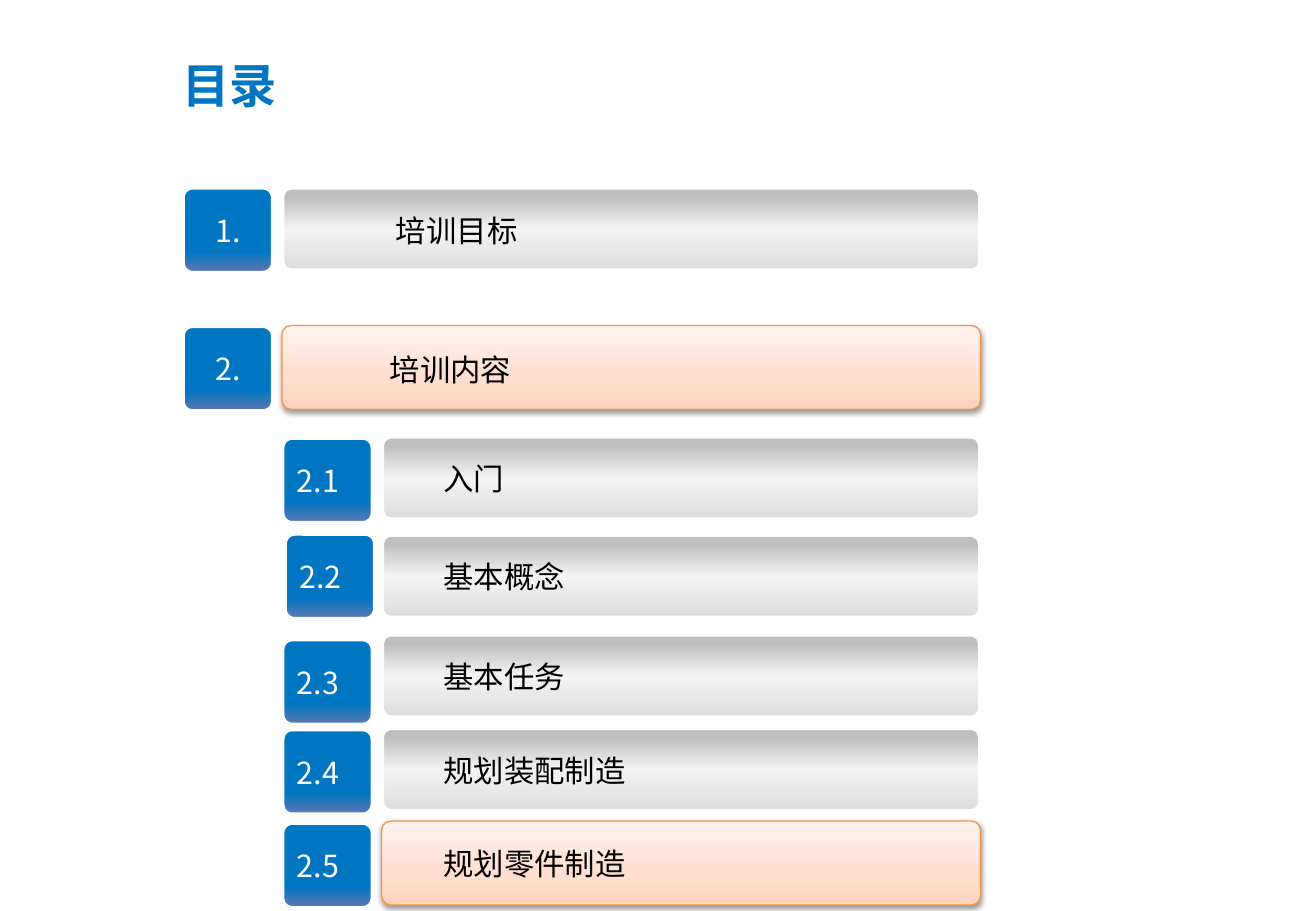
"""Build the table-of-contents slide with numbered tiles and gradient bars."""
from dataclasses import dataclass

from pptx import Presentation
from pptx import util as u
from pptx.dml import color
from pptx.enum import shapes, text
from pptx.oxml import ns, xmlchemy

TITLE = "目录"
ENTRIES = [
    {"number": "1.", "label": "培训目标", "level": 0, "tile": 1.54, "bar": 1.54, "text": 3.16},
    {"number": "2.", "label": "培训内容", "level": 0, "tile": 2.68, "bar": 2.68, "text": 3.11, "active": True},
    {"number": "2.1", "label": "入门", "level": 1, "tile": 3.6, "bar": 3.59},
    {"number": "2.2", "label": "基本概念", "level": 1, "tile": 4.39, "bar": 4.4, "shift": 0.02},
    {"number": "2.3", "label": "基本任务", "level": 1, "tile": 5.26, "bar": 5.22},
    {"number": "2.4", "label": "规划装配制造", "level": 1, "tile": 6, "bar": 5.99},
    {"number": "2.5", "label": "规划零件制造", "level": 1, "tile": 6.77, "bar": 6.76, "active": True},
]

SLIDE = (10.83, 7.5)
TITLE_AREA = (1.4, 0.19, 8.89, 1.01)
LEFT, STEP, RIGHT = 1.5, 0.82, 8.07
TILE_W, TILE_H, BAR_H = 0.75, 0.71, 0.69
LABEL_LEFT, LABEL_RIGHT, LABEL_H = 3.55, 7.73, 0.4
LABEL_DROPS = (0.16, 0.15)
NUMBER_ALIGNMENTS = (text.PP_ALIGN.CENTER, text.PP_ALIGN.LEFT)


@dataclass(frozen=True)
class Style:
    stops: tuple
    line: str
    weight: float
    corner: float
    shadow: tuple = ()


@dataclass(frozen=True)
class Theme:
    font: str = "Noto Sans CJK SC"
    accent: str = "0075C2"
    ink: str = "000000"
    paper: str = "FFFFFF"
    title_size: int = 28
    body_size: int = 18
    tile: Style = Style(((75, "0075C2"), (100, "6278B0")), "FFFFFF", 3, 0.119)
    plain: Style = Style(((11, "BFBFBF"), (50, "F3F3F3"), (100, "DDDDDD")),
                         "FFFFFF", 3, 0.109, ("FFFFFF", 50, 0, 10.6, 49))
    active: Style = Style(((0, "FFF2ED"), (65, "FFDED0"), (100, "FFD2BD")),
                          "F69240", 0.75, 0.109, ("000000", 38, 3.1, 1.6, 90))


THEME = Theme()


def inches(*lengths):
    return [u.Inches(length) for length in lengths]


def add_child(parent, tag, **attributes):
    child = xmlchemy.OxmlElement(tag)
    for name, value in attributes.items():
        child.set(name, str(value))
    parent.append(child)
    return child


def write(frame, words, ink, alignment=text.PP_ALIGN.LEFT, size=THEME.body_size, bold=False):
    frame.text = words
    para = frame.paragraphs[0]
    para.alignment = alignment
    span = para.runs[0]
    span.font.name = THEME.font
    span.font.size = u.Pt(size)
    span.font.bold = bold
    span.font.color.rgb = color.RGBColor.from_string(ink)
    add_child(span.font._element, "a:ea", typeface=THEME.font)


def add_panel(page, area, style):
    box = page.shapes.add_shape(shapes.MSO_SHAPE.ROUNDED_RECTANGLE, *inches(*area))
    box.adjustments[0] = style.corner
    box.line.color.rgb = color.RGBColor.from_string(style.line)
    box.line.width = u.Pt(style.weight)
    box.shadow.inherit = False
    box.fill.gradient()
    box.fill.gradient_angle = 270
    properties = box._element.spPr
    stop_list = properties.find(ns.qn("a:gradFill")).find(ns.qn("a:gsLst"))
    for stop in list(stop_list):
        stop_list.remove(stop)
    for position, shade in style.stops:
        stop = add_child(stop_list, "a:gs", pos=position * 1000)
        add_child(stop, "a:srgbClr", val=shade)
    if style.shadow:
        shade, opacity, blur, distance, angle = style.shadow
        effects = properties.find(ns.qn("a:effectLst"))
        shadow = add_child(effects, "a:outerShdw", blurRad=u.Pt(blur), dist=u.Pt(distance),
                           dir=angle * 60000, rotWithShape=0)
        tint = add_child(shadow, "a:srgbClr", val=shade)
        add_child(tint, "a:alpha", val=opacity * 1000)
    return box


def add_entry(page, entry):
    level, bar_top = entry["level"], entry["bar"]
    tile_left = LEFT + STEP * level + entry.get("shift", 0)
    bar_left = LEFT + STEP * (level + 1)
    label_left = entry.get("text", LABEL_LEFT)

    tile = add_panel(page, (tile_left, entry["tile"], TILE_W, TILE_H), THEME.tile)
    tile.text_frame.word_wrap = False
    tile.text_frame.vertical_anchor = text.MSO_ANCHOR.MIDDLE
    write(tile.text_frame, entry["number"], THEME.paper, NUMBER_ALIGNMENTS[level])

    bar_style = THEME.active if entry.get("active") else THEME.plain
    add_panel(page, (bar_left, bar_top, RIGHT - bar_left, BAR_H), bar_style)

    label_area = (label_left, bar_top + LABEL_DROPS[level], LABEL_RIGHT - label_left, LABEL_H)
    label = page.shapes.add_textbox(*inches(*label_area))
    label.text_frame.word_wrap = True
    label.text_frame.auto_size = text.MSO_AUTO_SIZE.SHAPE_TO_FIT_TEXT
    write(label.text_frame, entry["label"], THEME.ink)


def main():
    deck = Presentation()
    deck.slide_width, deck.slide_height = inches(*SLIDE)
    page = deck.slides.add_slide(deck.slide_layouts[5])
    title = page.shapes.title
    title.left, title.top, title.width, title.height = inches(*TITLE_AREA)
    title.text_frame.vertical_anchor = text.MSO_ANCHOR.MIDDLE
    write(title.text_frame, TITLE, THEME.accent, size=THEME.title_size, bold=True)
    for entry in ENTRIES:
        add_entry(page, entry)
    deck.save("out.pptx")


if __name__ == "__main__":
    main()
